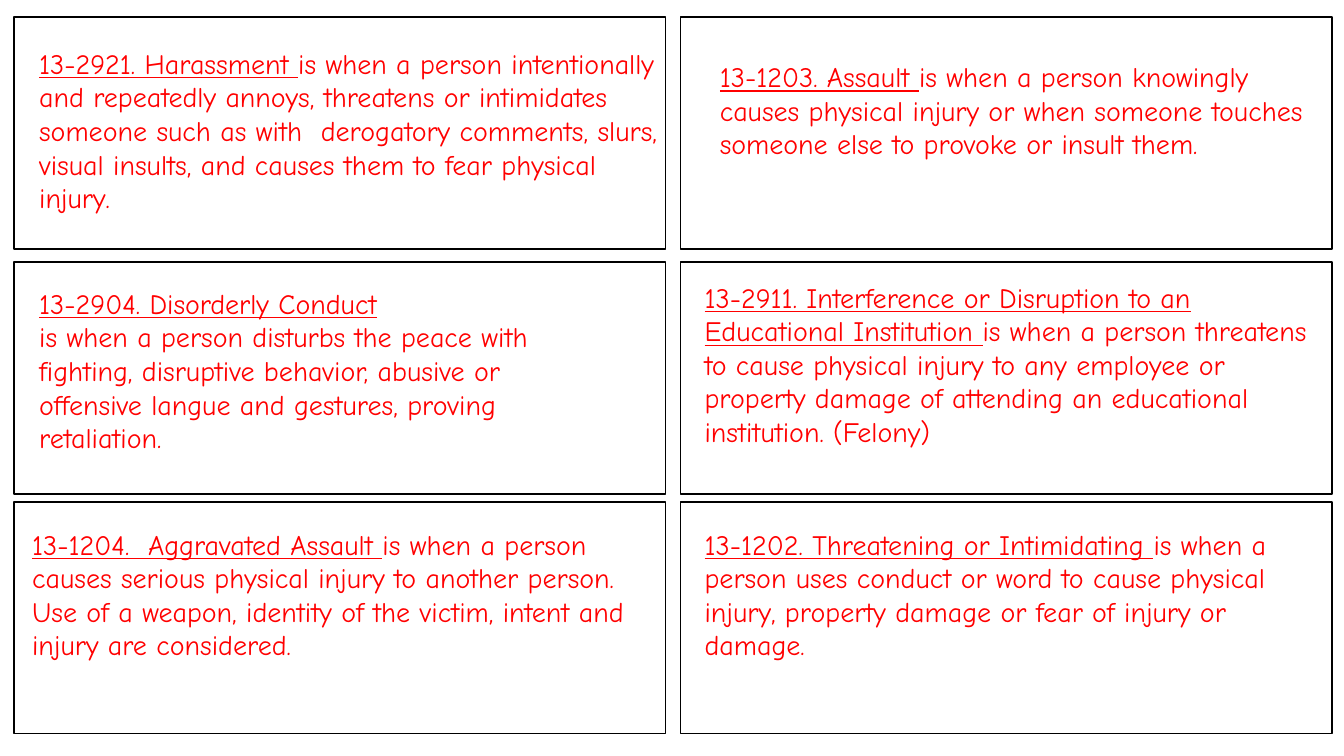
from pptx import Presentation
from pptx.dml.color import RGBColor
from pptx.enum import shapes, text
from pptx.util import Inches, Pt

CARD_WIDTH, CARD_HEIGHT = 6.46, 2.3
COLUMNS = (0.14, 6.75)
ROWS = (0.17, 2.6, 4.98)
STATUTE_FONT = {"name": "Comic Neue", "size": Pt(20)}

# Each statute: column, row, text offset and size, then paragraphs of (wording, underlined).
STATUTES = [
    (0, 0, (0.15, 0.24, 6.46, 1.78), [[
        ("13-2921. Harassment ", True),
        ("is when a person intentionally and repeatedly annoys, threatens or "
         "intimidates someone such as with  derogatory comments, slurs, visual "
         "insults, and causes them to fear physical injury.", False)]]),
    (1, 0, (0.29, 0.37, 6.29, 1.45), [[
        ("13-1203. Assault ", True),
        ("is when a person knowingly causes physical injury or when someone "
         "touches someone else to provoke or insult them.", False)]]),
    (0, 1, (0.15, 0.19, 5.82, 1.78), [
        [("13-2904. Disorderly Conduct", True)],
        [("is when a person disturbs the peace with fighting, disruptive "
          "behavior, abusive or offensive langue and gestures, proving "
          "retaliation.", False)]]),
    (1, 1, (0.14, 0.13, 6.44, 1.78), [[
        ("13-2911. Interference or Disruption to an Educational Institution ", True),
        ("is when a person threatens to cause physical injury to any employee "
         "or property damage of attending an educational institution. (Felony)", False)]]),
    (0, 2, (0.08, 0.2, 6.38, 1.45), [[
        ("13-1204.  Aggravated Assault ", True),
        ("is when a person causes serious physical injury to another person.  "
         "Use of a weapon, identity of the victim, intent and injury are "
         "considered.", False)]]),
    (1, 2, (0.14, 0.2, 6.24, 1.45), [[
        ("13-1202. Threatening or Intimidating ", True),
        ("is when a person uses conduct or word to cause physical injury, "
         "property damage or fear of injury or damage.", False)]]),
]


def paint(color_format, hex_color):
    """Set a colour format to a hex colour."""
    color_format.rgb = RGBColor.from_string(hex_color)


def add_card(slide, left, top):
    """Draw one outlined white card."""
    card = slide.shapes.add_shape(
        shapes.MSO_SHAPE.RECTANGLE,
        *map(Inches, (left, top, CARD_WIDTH, CARD_HEIGHT)))
    card.shadow.inherit = False
    card.fill.solid()
    paint(card.fill.fore_color, "FFFFFF")
    paint(card.line.color, "000000")
    card.line.width = Pt(1)


def add_statute(slide, left, top, placement, paragraphs):
    """Write a statute inside the card at the given corner."""
    dx, dy, width, height = placement
    statute = slide.shapes.add_textbox(
        *map(Inches, (left + dx, top + dy, width, height)))
    frame = statute.text_frame
    frame.word_wrap = True
    frame.auto_size = text.MSO_AUTO_SIZE.SHAPE_TO_FIT_TEXT
    for index, passages in enumerate(paragraphs):
        paragraph = frame.add_paragraph() if index else frame.paragraphs[0]
        for wording, underlined in passages:
            passage = paragraph.add_run()
            passage.text = wording
            for attribute, value in {**STATUTE_FONT, "underline": underlined}.items():
                setattr(passage.font, attribute, value)
            paint(passage.font.color, "FF0000")


def main():
    """Build the slide of statute cards and save it."""
    deck = Presentation()
    deck.slide_width, deck.slide_height = Inches(13.33), Inches(7.5)
    slide = deck.slides.add_slide(deck.slide_layouts[6])
    for left in COLUMNS:
        for top in ROWS:
            add_card(slide, left, top)
    for column, row, placement, paragraphs in STATUTES:
        add_statute(slide, COLUMNS[column], ROWS[row], placement, paragraphs)
    deck.save("out.pptx")


if __name__ == "__main__":
    main()
